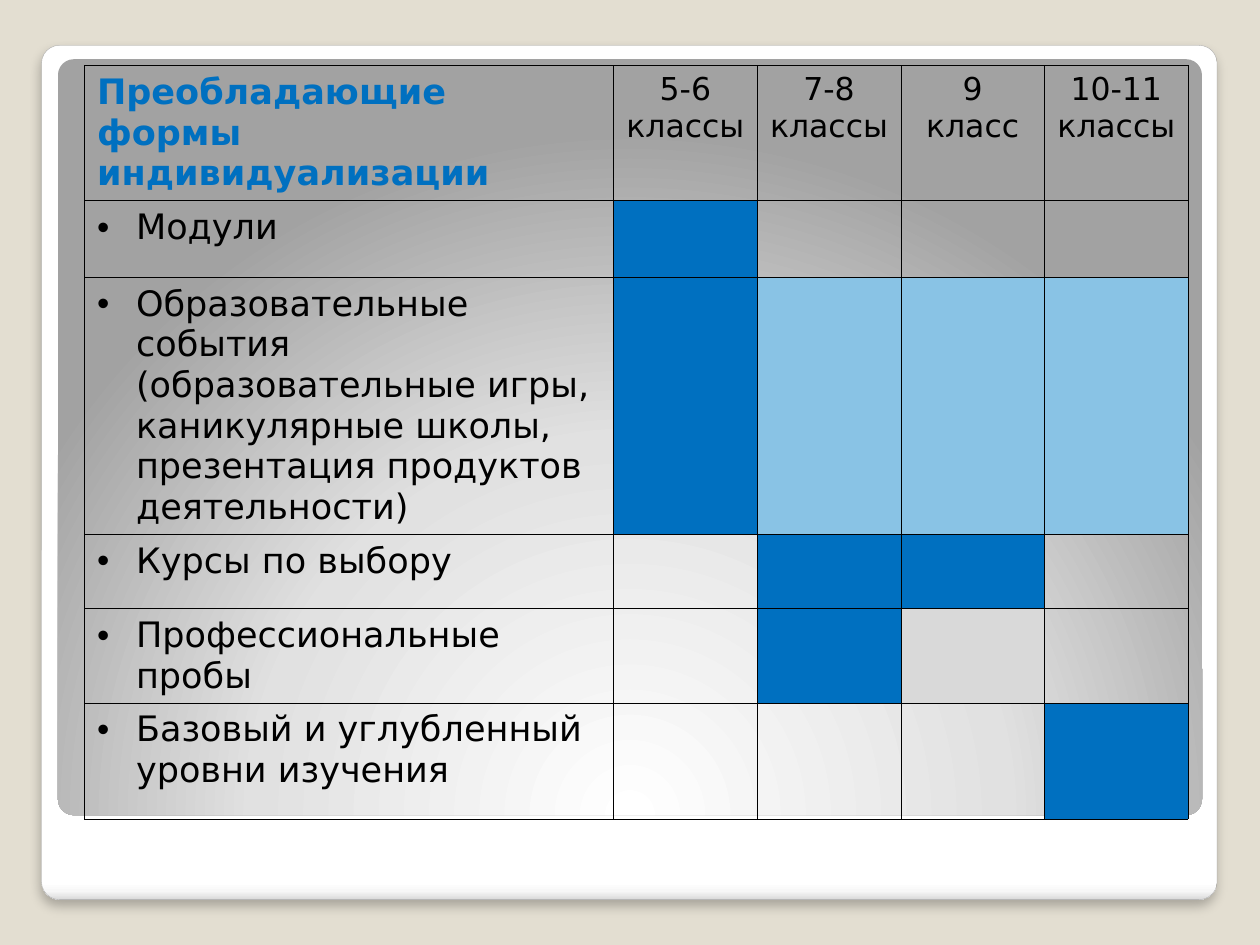
from lxml import etree
from pptx import Presentation
from pptx.dml.color import RGBColor
from pptx.enum.shapes import MSO_SHAPE
from pptx.enum.text import PP_ALIGN
from pptx.oxml import parse_xml
from pptx.oxml.ns import nsdecls, qn
from pptx.util import Inches, Pt

FONT = "DejaVu Sans"
BACKGROUND = RGBColor(0xE3, 0xDE, 0xD1)
OUTLINE = RGBColor(0xA4, 0xA4, 0xA4)
BLACK = RGBColor(0, 0, 0)
BLUE = RGBColor(0x00, 0x70, 0xC0)
LIGHT_BLUE = RGBColor(0x89, 0xC3, 0xE5)
GREY = RGBColor(0xD9, 0xD9, 0xD9)

CARD_STOPS = [(0, "FFFFFF"), (98, "FFFFFF"), (99, "F7F7F7"), (100, "DADADA")]
PANEL_STOPS = [(0, "FFFFFF"), (55, "E1E1E1"), (100, "A2A2A2")]
LINEAR_DOWN = '<a:lin ang="5400000" scaled="0"/>'
CIRCLE_BELOW = ('<a:path path="circle"><a:fillToRect l="50000" t="175000" '
                'r="50000" b="-75000"/></a:path>')

HEADINGS = ["Преобладающие формы индивидуализации",
            "5-6 классы", "7-8 классы", "9 класс", "10-11 классы"]
# Form of work, then the fill for each group of classes
FORMS = [
    ("Модули", [BLUE, None, None, None]),
    ("Образовательные события (образовательные игры, каникулярные школы, "
     "презентация продуктов деятельности)",
     [BLUE, LIGHT_BLUE, LIGHT_BLUE, LIGHT_BLUE]),
    ("Курсы по выбору", [None, BLUE, BLUE, None]),
    ("Профессиональные пробы", [None, BLUE, GREY, None]),
    ("Базовый и углубленный уровни изучения", [None, None, None, BLUE]),
]
COLUMN_WIDTHS = [4.2] + [1.14] * 4
ROW_HEIGHTS = [1.06, 0.61, 2.04, 0.59, 0.75, 0.92]


def add_gradient_panel(slide, box, stops, direction):
    shape = slide.shapes.add_shape(MSO_SHAPE.ROUNDED_RECTANGLE, *map(Inches, box))
    shape.adjustments[0] = 0.021
    shape.shadow.inherit = False
    shape.line.fill.background()
    shape.fill.background()
    stop_xml = "".join(f'<a:gs pos="{position * 1000}"><a:srgbClr val="{color}"/></a:gs>'
                       for position, color in stops)
    gradient = parse_xml(f'<a:gradFill {nsdecls("a")} rotWithShape="1">'
                         f'<a:gsLst>{stop_xml}</a:gsLst>{direction}</a:gradFill>')
    properties = shape.element.spPr
    properties.replace(properties.find(qn("a:noFill")), gradient)
    return shape


def add_card(slide, box):
    card = add_gradient_panel(slide, box, CARD_STOPS, LINEAR_DOWN)
    card.line.color.rgb = OUTLINE
    card.line.width = Pt(0.16)
    effects = card.element.spPr.find(qn("a:effectLst"))
    effects.append(parse_xml(
        f'<a:outerShdw {nsdecls("a")} blurRad="{Pt(6)}" dist="{Pt(4)}" dir="5400000" '
        'algn="tl" rotWithShape="0"><a:srgbClr val="000000">'
        '<a:alpha val="25000"/></a:srgbClr></a:outerShdw>'))


def style_cell(cell, fill_color):
    # Borders come before the fill in the cell properties
    properties = cell._tc.get_or_add_tcPr()
    for side in ("lnL", "lnR", "lnT", "lnB"):
        properties.append(parse_xml(
            f'<a:{side} {nsdecls("a")} w="{Pt(0.25)}"><a:solidFill>'
            f'<a:srgbClr val="{BLACK}"/></a:solidFill></a:{side}>'))
    if fill_color is None:
        cell.fill.background()
    else:
        cell.fill.solid()
        cell.fill.fore_color.rgb = fill_color


def write_cell(cell, text, size, color=BLACK, bold=False, align=PP_ALIGN.LEFT, bullet=False):
    paragraph = cell.text_frame.paragraphs[0]
    paragraph.alignment = align
    if bullet:
        properties = paragraph._p.get_or_add_pPr()
        properties.set("marL", str(Inches(0.31)))
        properties.set("indent", str(-Inches(0.31)))
        etree.SubElement(properties, qn("a:buFont")).set("typeface", "Arial")
        etree.SubElement(properties, qn("a:buChar")).set("char", "•")
    run = paragraph.add_run()
    run.text = text
    run.font.name = FONT
    run.font.size = Pt(size)
    run.font.bold = bold
    run.font.color.rgb = color


def add_forms_table(slide, left, top):
    frame = slide.shapes.add_table(
        len(ROW_HEIGHTS), len(COLUMN_WIDTHS), Inches(left), Inches(top),
        Inches(sum(COLUMN_WIDTHS)), Inches(sum(ROW_HEIGHTS)))
    table = frame.table
    table.first_row = table.horz_banding = False
    for column, width in zip(table.columns, COLUMN_WIDTHS):
        column.width = Inches(width)
    for row, height in zip(table.rows, ROW_HEIGHTS):
        row.height = Inches(height)

    # Heading row
    for index, heading in enumerate(HEADINGS):
        cell = table.cell(0, index)
        style_cell(cell, None)
        if index == 0:
            write_cell(cell, heading, 20, BLUE, bold=True)
        else:
            write_cell(cell, heading, 18, align=PP_ALIGN.CENTER)

    # One row for each form of work
    for row_index, (form, fills) in enumerate(FORMS, start=1):
        for column_index, fill_color in enumerate([None] + fills):
            style_cell(table.cell(row_index, column_index), fill_color)
        write_cell(table.cell(row_index, 0), form, 20, bullet=True)


def main():
    presentation = Presentation()
    presentation.slide_width = Inches(10)
    presentation.slide_height = Inches(7.5)
    slide = presentation.slides.add_slide(presentation.slide_layouts[6])
    slide.background.fill.solid()
    slide.background.fill.fore_color.rgb = BACKGROUND

    add_card(slide, (0.33, 0.36, 9.33, 6.78))
    add_gradient_panel(slide, (0.46, 0.47, 9.08, 6), PANEL_STOPS, CIRCLE_BELOW)
    add_forms_table(slide, 0.67, 0.52)
    presentation.save("out.pptx")


if __name__ == "__main__":
    main()
